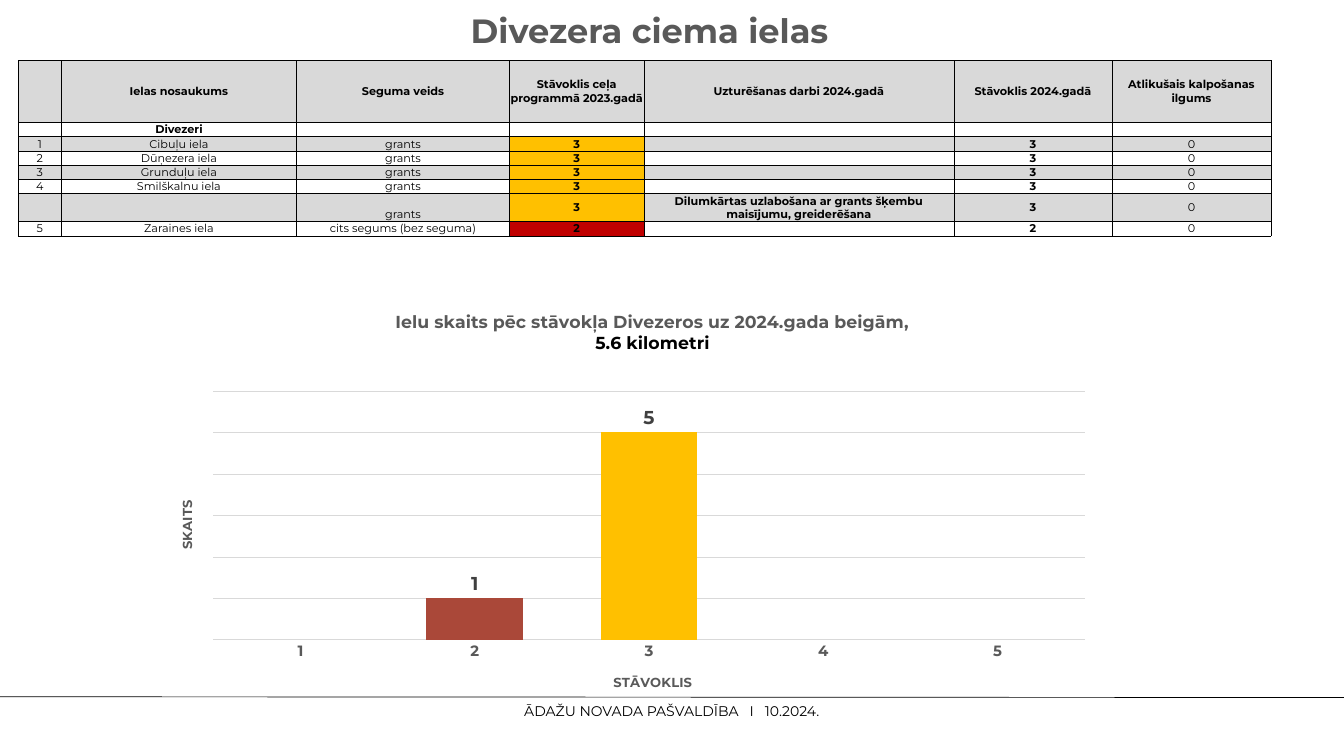
from lxml.etree import SubElement
from pptx import Presentation
from pptx.chart.data import CategoryChartData
from pptx.dml.color import RGBColor
from pptx.enum.chart import XL_CHART_TYPE, XL_LABEL_POSITION, XL_TICK_LABEL_POSITION, XL_TICK_MARK
from pptx.enum.shapes import MSO_CONNECTOR
from pptx.enum.text import MSO_ANCHOR, PP_ALIGN
from pptx.oxml.ns import qn
from pptx.util import Cm, Pt

FONT = "Montserrat"
BLACK, DARK, GREY, WHITE = "000000", "595959", "D9D9D9", "FFFFFF"
STATE_FILLS = {"2": "C00000", "3": "FFC000"}

COL_WIDTHS = [1.63, 8.89, 8.05, 5.08, 11.71, 5.99, 5.99]
HEADERS = ["", "Ielas nosaukums", "Seguma veids", "Stāvoklis ceļa programmā 2023.gadā",
           "Uzturēšanas darbi 2024.gadā", "Stāvoklis 2024.gadā", "Atlikušais kalpošanas ilgums"]
WORKS = "Dilumkārtas uzlabošana ar grants šķembu maisījumu, greiderēšana"
STREETS = [
    ["", "Divezeri", "", "", "", "", ""],
    ["1", "Cibuļu iela", "grants", "3", "", "3", "0"],
    ["2", "Dūņezera iela", "grants", "3", "", "3", "0"],
    ["3", "Grunduļu iela", "grants", "3", "", "3", "0"],
    ["4", "Smilškalnu iela", "grants", "3", "", "3", "0"],
    ["", "", "grants", "3", WORKS, "3", "0"],
    ["5", "Zaraines iela", "cits segums (bez seguma)", "2", "", "2", "0"],
]
STATE_COL, WORKS_COL = 3, 4
BOLD_COLS = (3, 4, 5)


def rgb(value):
    return RGBColor.from_string(value)


def set_font(font, size, color=BLACK, bold=False):
    font.name = FONT
    font.size = Pt(size)
    font.bold = bold
    font.color.rgb = rgb(color)


def add_title(slide, text):
    sp = slide.shapes.title
    sp.left, sp.top, sp.width, sp.height = Cm(4.45), Cm(0.18), Cm(40.2), Cm(2.1)
    tf = sp.text_frame
    tf.text = text
    tf.vertical_anchor = MSO_ANCHOR.MIDDLE
    p = tf.paragraphs[0]
    p.alignment = PP_ALIGN.CENTER
    p.line_spacing = 0.9
    set_font(p.font, 36, DARK, True)


def add_borders(cell):
    tcPr = cell._tc.get_or_add_tcPr()
    for side in ("a:lnL", "a:lnR", "a:lnT", "a:lnB"):
        ln = SubElement(tcPr, qn(side), w=str(Pt(0.5)))
        fill = SubElement(ln, qn("a:solidFill"))
        SubElement(fill, qn("a:srgbClr"), val=BLACK)


def fill_cell(cell, text, fill, bold, anchor, margin):
    add_borders(cell)
    cell.fill.solid()
    cell.fill.fore_color.rgb = rgb(fill)
    cell.margin_left = cell.margin_right = cell.margin_top = Cm(margin)
    cell.margin_bottom = 0
    cell.vertical_anchor = anchor
    p = cell.text_frame.paragraphs[0]
    p.text = text
    p.alignment = PP_ALIGN.CENTER
    set_font(p.font, 12, bold=bold)


def add_street_table(slide):
    rows = [HEADERS] + STREETS
    frame = slide.shapes.add_table(len(rows), len(HEADERS), Cm(0.69), Cm(2.29),
                                   Cm(sum(COL_WIDTHS)), Cm(5.7))
    table = frame.table
    table.horz_banding = False
    for column, width in zip(table.columns, COL_WIDTHS):
        column.width = Cm(width)
    for i, values in enumerate(rows):
        table.rows[i].height = Cm(0.48 if i else 2.34)
        band = WHITE if i % 2 else GREY
        for j, text in enumerate(values):
            fill = STATE_FILLS.get(text, band) if j == STATE_COL else band
            centred = i == 0 or (values[WORKS_COL] and j >= STATE_COL)
            fill_cell(table.cell(i, j), text, fill,
                      bold=i < 2 or j in BOLD_COLS,
                      anchor=MSO_ANCHOR.MIDDLE if centred else MSO_ANCHOR.BOTTOM,
                      margin=0.02 if i else 0)


def set_layout(layout, **values):
    """Place a chart part by fractions of the chart area."""
    manual = SubElement(layout, qn("c:manualLayout"))
    for name, value in values.items():
        SubElement(manual, qn(f"c:{name}"), val=str(value))


def set_chart_title(title, lines, size, x, y):
    """Write (text, colour) lines into a chart or axis title."""
    tf = title.text_frame
    for i, (text, color) in enumerate(lines):
        p = tf.add_paragraph() if i else tf.paragraphs[0]
        r = p.add_run()
        r.text = text
        set_font(r.font, size, color, True)
    set_layout(title._element.find(qn("c:layout")), xMode="edge", yMode="edge", x=x, y=y)


def add_state_chart(slide):
    data = CategoryChartData()
    data.categories = ["1", "2", "3", "4", "5"]
    data.add_series("Series 1", [None, 1, 5, None, None])
    chart = slide.shapes.add_chart(XL_CHART_TYPE.COLUMN_CLUSTERED, Cm(5.92), Cm(11.35),
                                   Cm(35.79), Cm(14.94), data).chart
    chart.has_legend = False
    set_font(chart.font, 10)
    set_chart_title(chart.chart_title,
                    [("Ielu skaits pēc stāvokļa Divezeros uz 2024.gada beigām,", DARK),
                     ("5.6 kilometri", BLACK)], 18.6, 0.25, 0.02)

    # Plot area
    area = chart._chartSpace.chart.plotArea
    layout = area.find(qn("c:layout"))
    if layout is None:
        layout = SubElement(area, qn("c:layout"))
        area.insert(0, layout)
    set_layout(layout, layoutTarget="inner", xMode="edge", yMode="edge",
               x=0.06, y=0.23, w=0.92, h=0.63)

    # Columns and their labels
    plot = chart.plots[0]
    plot.gap_width = 80
    plot.vary_by_categories = False
    series = plot.series[0]
    series.format.fill.solid()
    series.format.fill.fore_color.rgb = rgb("4472C4")
    for i, color in ((1, "AA4839"), (2, "FFC000")):
        fill = series.points[i].format.fill
        fill.solid()
        fill.fore_color.rgb = rgb(color)
    labels = series.data_labels
    labels.show_value = True
    labels.position = XL_LABEL_POSITION.OUTSIDE_END
    set_font(labels.font, 20, "404040", True)

    # Axes
    states, counts = chart.category_axis, chart.value_axis
    for axis in (states, counts):
        axis.major_tick_mark = axis.minor_tick_mark = XL_TICK_MARK.NONE
        axis.format.line.fill.background()
    set_font(states.tick_labels.font, 16, DARK, True)
    set_chart_title(states.axis_title, [("STĀVOKLIS", DARK)], 14, 0.48, 0.94)
    counts.tick_label_position = XL_TICK_LABEL_POSITION.NONE
    counts.minimum_scale, counts.maximum_scale, counts.major_unit = 0, 6, 1
    grid = counts.major_gridlines.format.line
    grid.width = Pt(0.75)
    grid.color.rgb = rgb(GREY)
    set_chart_title(counts.axis_title, [("SKAITS", DARK)], 14, 0.02, 0.5)
    body = counts.axis_title.text_frame._txBody.find(qn("a:bodyPr"))
    body.set("rot", "-5400000")
    body.set("vert", "horz")


def add_footer(slide, text):
    line = slide.shapes.add_connector(MSO_CONNECTOR.STRAIGHT, 0, Cm(26.34), Cm(50.8), Cm(26.37))
    line.line.width = Pt(0.75)
    line.line.color.rgb = rgb(BLACK)
    SubElement(line._element.spPr, qn("a:effectLst"))
    tf = slide.shapes.add_textbox(Cm(0.25), Cm(26.57), Cm(50.3), Cm(0.64)).text_frame
    tf.word_wrap = True
    tf.margin_left = tf.margin_right = tf.margin_top = tf.margin_bottom = 0
    p = tf.paragraphs[0]
    p.text = text
    p.alignment = PP_ALIGN.CENTER
    p.line_spacing = Pt(18)
    set_font(p.font, 15)


def main():
    prs = Presentation()
    prs.slide_width, prs.slide_height = Cm(50.8), Cm(28.58)
    slide = prs.slides.add_slide(prs.slide_layouts[5])
    add_street_table(slide)
    add_title(slide, "Divezera ciema ielas")
    add_state_chart(slide)
    add_footer(slide, "ĀDAŽU NOVADA PAŠVALDĪBA   I   10.2024.")
    prs.save("out.pptx")


if __name__ == "__main__":
    main()
